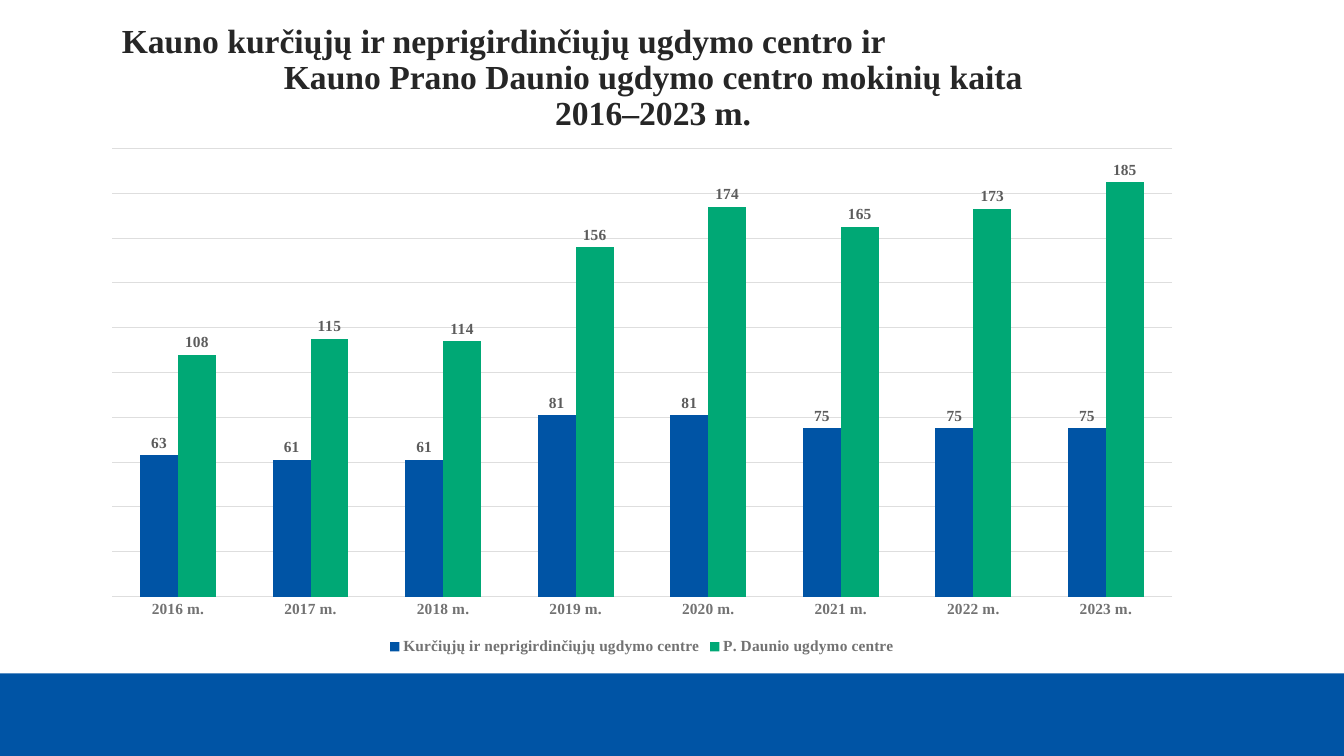
"""Build a slide with a column chart of pupil numbers at two schools."""
from dataclasses import dataclass

import pptx
import pptx.chart.data
import pptx.dml.color
import pptx.enum.chart
import pptx.enum.shapes
import pptx.enum.text
import pptx.oxml
import pptx.oxml.ns
import pptx.util
from pptx.util import Cm


@dataclass(frozen=True)
class Theme:
    """Colours, fonts and type sizes of the slide."""
    blue: str = "0054A5"
    green: str = "00A875"
    ink: str = "262626"
    axis_grey: str = "727272"
    label_grey: str = "5C5C5C"
    grid_grey: str = "DEDEDE"
    serif: str = "Times New Roman"
    sans: str = "Open Sans"
    title_size: int = 24
    label_size: int = 11
    chart_size: int = 10


THEME = Theme()
ALIGN = pptx.enum.text.PP_ALIGN
TITLE_LINES = [
    ("Kauno kurčiųjų ir neprigirdinčiųjų ugdymo centro ir", ALIGN.LEFT),
    ("Kauno Prano Daunio ugdymo centro mokinių kaita", ALIGN.CENTER),
    ("2016–2023 m.", ALIGN.CENTER),
]
YEARS = [f"{year} m." for year in range(2016, 2024)]
SCHOOLS = [
    ("Kurčiųjų ir neprigirdinčiųjų ugdymo centre", THEME.blue,
     [63, 61, 61, 81, 81, 75, 75, 75]),
    ("P. Daunio ugdymo centre", THEME.green,
     [108, 115, 114, 156, 174, 165, 173, 185]),
]
PLOT_AREA = {"x": 0.02, "y": 0.02, "w": 0.96, "h": 0.86}


def rgb(code):
    """Return the colour for a hex code."""
    return pptx.dml.color.RGBColor.from_string(code)


def apply_format(target, values):
    """Set each attribute in values on target."""
    for attribute, value in values.items():
        setattr(target, attribute, value)


def format_font(font, size, color, name=THEME.serif, bold=True):
    """Give a font its face, size, weight and colour."""
    apply_format(font, {"name": name, "size": pptx.util.Pt(size), "bold": bold})
    font.color.rgb = rgb(color)


def add_footer_band(slide):
    """Add the blue band along the bottom edge."""
    band = slide.shapes.add_shape(pptx.enum.shapes.MSO_SHAPE.RECTANGLE,
                                  Cm(0), Cm(16.97), Cm(33.87), Cm(2.08))
    band.shadow.inherit = False
    band.fill.solid()
    band.fill.fore_color.rgb = rgb(THEME.blue)
    band.line.fill.background()


def fill_title(title):
    """Place the title and write its lines."""
    apply_format(title, {"left": Cm(2.82), "top": Cm(0.56),
                         "width": Cm(27.28), "height": Cm(2.92)})
    frame = title.text_frame
    apply_format(frame, {
        "text": "\n".join(line for line, _ in TITLE_LINES),
        "word_wrap": True,
        "auto_size": pptx.enum.text.MSO_AUTO_SIZE.NONE,
        "vertical_anchor": pptx.enum.text.MSO_ANCHOR.BOTTOM,
        "margin_left": Cm(0.25), "margin_right": Cm(0.25),
        "margin_top": Cm(0.13), "margin_bottom": Cm(0.13),
    })
    for paragraph, (_, alignment) in zip(frame.paragraphs, TITLE_LINES):
        apply_format(paragraph, {"alignment": alignment, "line_spacing": 0.9,
                                 "space_before": pptx.util.Pt(0)})
        format_font(paragraph.runs[0].font, THEME.title_size, THEME.ink)


def set_plot_layout(chart):
    """Fix the inner plot area as fractions of the chart."""
    plot_area = chart.plots[0]._element.getparent()
    for old_layout in plot_area.findall(pptx.oxml.ns.qn("c:layout")):
        plot_area.remove(old_layout)
    modes = "".join(f'<c:{side}Mode val="edge"/>' for side in "xy")
    sizes = "".join(f'<c:{side} val="{share}"/>' for side, share in PLOT_AREA.items())
    plot_area.insert(0, pptx.oxml.parse_xml(
        f'<c:layout {pptx.oxml.ns.nsdecls("c")}><c:manualLayout>'
        f'<c:layoutTarget val="inner"/>{modes}{sizes}'
        '</c:manualLayout></c:layout>'))


def format_axes(chart):
    """Style the year axis and hide the value axis behind its grid."""
    no_tick = pptx.enum.chart.XL_TICK_MARK.NONE
    years = chart.category_axis
    apply_format(years, {"major_tick_mark": no_tick, "minor_tick_mark": no_tick})
    years.format.line.fill.background()
    format_font(years.tick_labels.font, THEME.label_size, THEME.axis_grey)
    pupils = chart.value_axis
    apply_format(pupils, {"minimum_scale": 0, "maximum_scale": 200, "major_unit": 20,
                          "visible": False, "has_major_gridlines": True})
    grid = pupils.major_gridlines.format.line
    grid.color.rgb = rgb(THEME.grid_grey)
    grid.width = pptx.util.Pt(0.75)


def format_school(series, color):
    """Colour one school's columns and label their values."""
    series.invert_if_negative = False
    series.format.fill.solid()
    series.format.fill.fore_color.rgb = rgb(color)
    labels = series.data_labels
    apply_format(labels, {
        "show_value": True,
        "position": pptx.enum.chart.XL_LABEL_POSITION.OUTSIDE_END,
    })
    format_font(labels.font, THEME.label_size, THEME.label_grey)


def add_pupil_chart(slide):
    """Add the clustered columns of pupils by year and school."""
    pupil_data = pptx.chart.data.CategoryChartData()
    pupil_data.categories = YEARS
    for school, _, pupils in SCHOOLS:
        pupil_data.add_series(school, pupils)
    chart = slide.shapes.add_chart(
        pptx.enum.chart.XL_CHART_TYPE.COLUMN_CLUSTERED,
        Cm(2.26), Cm(3.48), Cm(27.84), Cm(13.13), pupil_data).chart
    format_font(chart.font, THEME.chart_size, THEME.ink, THEME.sans, False)
    apply_format(chart, {"has_title": False, "has_legend": True})
    apply_format(chart.legend, {
        "position": pptx.enum.chart.XL_LEGEND_POSITION.BOTTOM,
        "include_in_layout": False,
    })
    format_font(chart.legend.font, THEME.label_size, THEME.axis_grey)
    columns = chart.plots[0]
    apply_format(columns, {"gap_width": 150, "overlap": 0, "vary_by_categories": False})
    for series, (_, color, _) in zip(columns.series, SCHOOLS):
        format_school(series, color)
    format_axes(chart)
    set_plot_layout(chart)


def main():
    """Build and save the presentation."""
    presentation = pptx.Presentation()
    apply_format(presentation, {"slide_width": Cm(33.87), "slide_height": Cm(19.05)})
    slide = presentation.slides.add_slide(
        presentation.slide_layouts.get_by_name("Title Only"))
    add_footer_band(slide)
    fill_title(slide.shapes.title)
    add_pupil_chart(slide)
    presentation.save("out.pptx")


if __name__ == "__main__":
    main()
